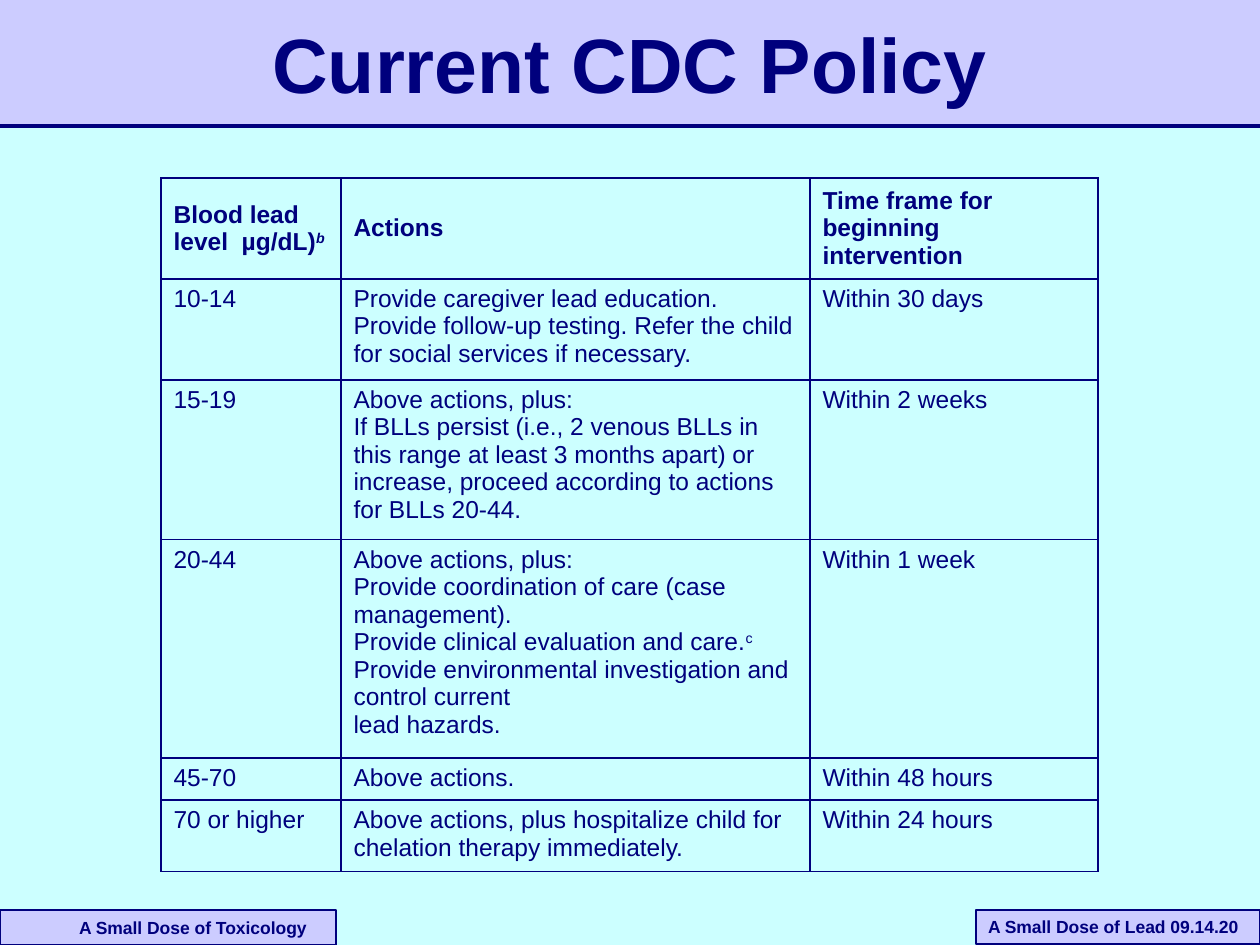
from dataclasses import dataclass

from lxml.etree import SubElement
from pptx import Presentation
from pptx.dml.color import RGBColor
from pptx.enum.shapes import MSO_CONNECTOR, MSO_SHAPE
from pptx.enum.text import MSO_ANCHOR as ANCHOR, PP_ALIGN as ALIGN
from pptx.oxml.ns import qn
from pptx.util import Pt

TITLE = "Current CDC Policy"
FOOTERS = [
    ("A Small Dose of Toxicology", (0, 910, 336, 35), 79),
    ("A Small Dose of Lead 09.14.20", (976, 910, 284, 34), 12),
]
ROWS = [
    ("Blood lead level\u00a0 µg/dL)^b", "Actions", "Time frame for beginning intervention"),
    ("10-14",
     "Provide caregiver lead education. Provide follow-up testing. "
     "Refer the child for social services if necessary.",
     "Within 30 days"),
    ("15-19",
     "Above actions, plus:\n"
     "If BLLs persist (i.e., 2 venous BLLs in this range at least 3 months apart) "
     "or increase, proceed according to actions for BLLs 20-44.",
     "Within 2 weeks"),
    ("20-44",
     "Above actions, plus:\n"
     "Provide coordination of care (case management).\n"
     "Provide clinical evaluation and care.^c\n"
     "Provide environmental investigation and control current\n"
     "lead hazards.",
     "Within 1 week"),
    ("45-70", "Above actions.", "Within 48 hours"),
    ("70 or higher",
     "Above actions, plus hospitalize child for chelation therapy immediately.",
     "Within 24 hours"),
]
COL_WIDTHS = [180, 469, 288]
ROW_HEIGHTS = [95, 96, 150, 205, 42, 69]
TABLE_LEFT, TABLE_TOP = 161, 178
SLIDE_W, SLIDE_H, BAND_H = 1260, 945, 126
PX = 914400 // 126


@dataclass(frozen=True)
class Theme:
    font: str = "Arial"
    ink: RGBColor = RGBColor.from_string("00007D")
    band: RGBColor = RGBColor.from_string("CCCCFF")
    page: RGBColor = RGBColor.from_string("CCFFFF")
    title: int = 44
    body: int = 14
    footer: int = 10


THEME = Theme()


def px(*values):
    return [v * PX for v in values]


def style(p, size, bold):
    p.font.name, p.font.size, p.font.bold = THEME.font, Pt(size), bold
    p.font.color.rgb = THEME.ink


def add_band(slide, box, outlined=False):
    sp = slide.shapes.add_shape(MSO_SHAPE.RECTANGLE, *px(*box))
    sp.shadow.inherit = False
    sp.fill.solid()
    sp.fill.fore_color.rgb = THEME.band
    if outlined:
        sp.line.color.rgb = THEME.ink
        sp.line.width = Pt(0.75)
    else:
        sp.line.fill.background()
    return sp


def add_header(slide):
    add_band(slide, (0, 0, SLIDE_W, BAND_H))
    rule = slide.shapes.add_connector(MSO_CONNECTOR.STRAIGHT, *px(0, BAND_H, SLIDE_W, BAND_H))
    rule.line.color.rgb = THEME.ink
    rule.line.width = Pt(2)
    SubElement(rule._element.spPr, qn("a:effectLst"))
    tf = slide.shapes.add_textbox(*px(68, 10, 1124, 105)).text_frame
    tf.word_wrap = True
    tf.vertical_anchor = ANCHOR.MIDDLE
    p = tf.paragraphs[0]
    p.text, p.alignment = TITLE, ALIGN.CENTER
    style(p, THEME.title, True)


def add_footer(slide, text, box, inset):
    tf = add_band(slide, box, outlined=True).text_frame
    tf.word_wrap = True
    tf.margin_left = inset * PX
    tf.margin_right = 0
    tf.vertical_anchor = ANCHOR.MIDDLE
    p = tf.paragraphs[0]
    p.text, p.alignment = text, ALIGN.LEFT
    style(p, THEME.footer, True)


def add_borders(cell):
    tc_pr = cell._tc.get_or_add_tcPr()
    for i, side in enumerate(("lnL", "lnR", "lnT", "lnB")):
        ln = tc_pr.makeelement(qn(f"a:{side}"), {"w": str(Pt(1))})
        fill = SubElement(ln, qn("a:solidFill"))
        SubElement(fill, qn("a:srgbClr"), val=str(THEME.ink))
        tc_pr.insert(i, ln)


def fill_cell(cell, text, header):
    cell.fill.background()
    add_borders(cell)
    cell.vertical_anchor = ANCHOR.MIDDLE if header else ANCHOR.TOP
    p = cell.text_frame.paragraphs[0]
    style(p, THEME.body, header)
    for i, line in enumerate(text.split("\n")):
        if i:
            p.add_line_break()
        main, _, note = line.partition("^")
        p.add_run().text = main
        if note:
            r = p.add_run()
            r.text = note
            r.font.italic = header
            r._r.get_or_add_rPr().set("baseline", "30000")


def add_policy_table(slide):
    box = px(TABLE_LEFT, TABLE_TOP, sum(COL_WIDTHS), sum(ROW_HEIGHTS))
    table = slide.shapes.add_table(len(ROWS), len(COL_WIDTHS), *box).table
    table.horz_banding = False
    for col, width in zip(table.columns, px(*COL_WIDTHS)):
        col.width = width
    for row, height, texts in zip(table.rows, px(*ROW_HEIGHTS), ROWS):
        row.height = height
        for cell, text in zip(row.cells, texts):
            fill_cell(cell, text, header=texts is ROWS[0])


def main():
    prs = Presentation()
    prs.slide_width, prs.slide_height = px(SLIDE_W, SLIDE_H)
    slide = prs.slides.add_slide(prs.slide_layouts[6])
    slide.background.fill.solid()
    slide.background.fill.fore_color.rgb = THEME.page
    add_header(slide)
    for footer in FOOTERS:
        add_footer(slide, *footer)
    add_policy_table(slide)
    prs.save("out.pptx")


if __name__ == "__main__":
    main()
